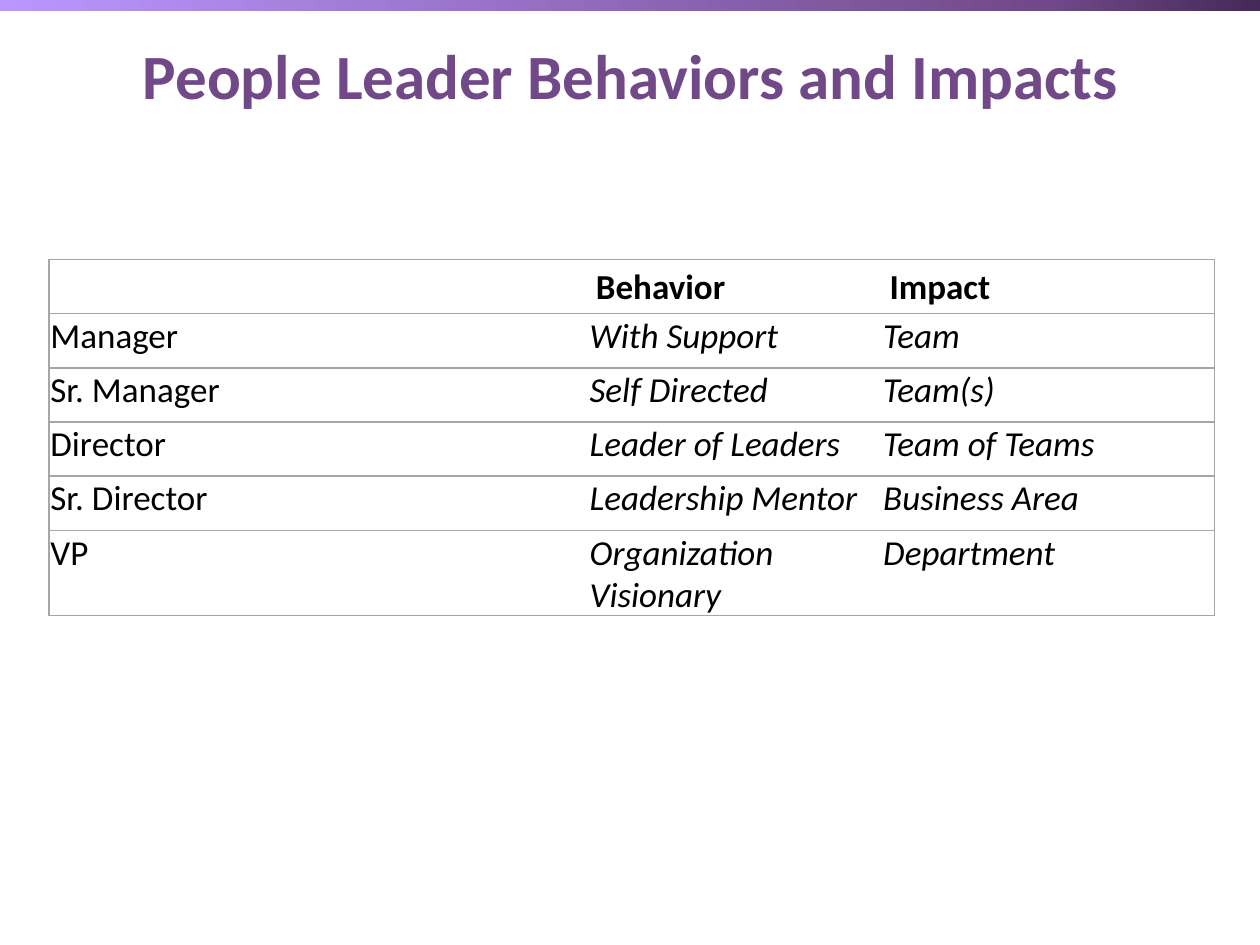
from copy import deepcopy
from lxml.etree import SubElement as Sub
from pptx import Presentation
from pptx.dml.color import RGBColor as RGB
from pptx.enum.shapes import MSO_SHAPE as Shape
from pptx.enum.text import MSO_ANCHOR as Anchor, PP_ALIGN as Align
from pptx.oxml.ns import qn
from pptx.util import Inches, Pt

TITLE = "People Leader Behaviors and Impacts"
ROWS = [
    ("", "Behavior", "Impact"),
    ("Manager", "With Support", "Team"),
    ("Sr. Manager", "Self Directed", "Team(s)"),
    ("Director", "Leader of Leaders", "Team of Teams"),
    ("Sr. Director", "Leadership Mentor", "Business Area"),
    ("VP", "Organization Visionary", "Department"),
]
WIDTHS = [4.28, 2.33, 2.64]
HIGH = 0.43
STOPS = [(0, "442A58"), (0.17, "714989"), (1, "BA97FF")]
PURPLE, GREY, BLACK = "714989", "A6A6A6", "000000"


def color(code):
    return RGB.from_string(code)


def style(font, size, code, bold=False, italic=False):
    font.name = "Calibri"
    font.size = Pt(size)
    font.bold = bold
    font.italic = italic
    font.color.rgb = color(code)


def border(cell, sides):
    props = cell._tc.get_or_add_tcPr()
    for side in "LRTB":
        line = Sub(props, qn("a:ln" + side), w=str(Pt(1)))
        if side in sides:
            fill = Sub(line, qn("a:solidFill"))
            Sub(fill, qn("a:srgbClr"), val=GREY)
        else:
            Sub(line, qn("a:noFill"))


def add_band(slide):
    band = slide.shapes.add_shape(
        Shape.RECTANGLE, Inches(-0.02), Inches(-0.02), Inches(10.02), Inches(0.11))
    band.shadow.inherit = False
    band.line.fill.background()
    band.fill.gradient()
    band.fill.gradient_angle = 180
    stops = band._element.spPr.find(".//" + qn("a:gsLst"))
    stops.insert(1, deepcopy(stops[0]))
    for stop, (place, code) in zip(band.fill.gradient_stops, STOPS):
        stop.position = place
        stop.color.rgb = color(code)


def add_title(slide):
    box = slide.shapes.add_textbox(
        Inches(0.28), Inches(0.08), Inches(9.45), Inches(1.02))
    frame = box.text_frame
    frame.word_wrap = True
    frame.vertical_anchor = Anchor.MIDDLE
    frame.text = TITLE
    para = frame.paragraphs[0]
    para.alignment = Align.CENTER
    style(para.runs[0].font, 36, PURPLE, bold=True)


def add_grid(slide):
    table = slide.shapes.add_table(
        len(ROWS), len(WIDTHS), Inches(0.39), Inches(2.06),
        Inches(sum(WIDTHS)), Inches(HIGH * len(ROWS))).table
    table.first_row = table.horz_banding = False
    for col, wide in zip(table.columns, WIDTHS):
        col.width = Inches(wide)
    last = len(WIDTHS) - 1
    for r, texts in enumerate(ROWS):
        table.rows[r].height = Inches(HIGH)
        head = r == 0
        for c, text in enumerate(texts):
            cell = table.cell(r, c)
            border(cell, "TB" + {0: "L", last: "R"}.get(c, ""))
            cell.fill.background()
            cell.margin_left = cell.margin_right = Inches(0.06 if head else 0.01)
            cell.margin_top = Inches(0 if head else 0.01)
            cell.margin_bottom = 0
            cell.text_frame.text = text
            para = cell.text_frame.paragraphs[0]
            if head:
                para.line_spacing = 1.15
            for run in para.runs:
                style(run.font, 20, BLACK, bold=head, italic=not head and c > 0)


def main():
    deck = Presentation()
    deck.slide_width, deck.slide_height = Inches(10), Inches(7.5)
    slide = deck.slides.add_slide(deck.slide_layouts[6])
    add_band(slide)
    add_title(slide)
    add_grid(slide)
    deck.save("out.pptx")


if __name__ == "__main__":
    main()
